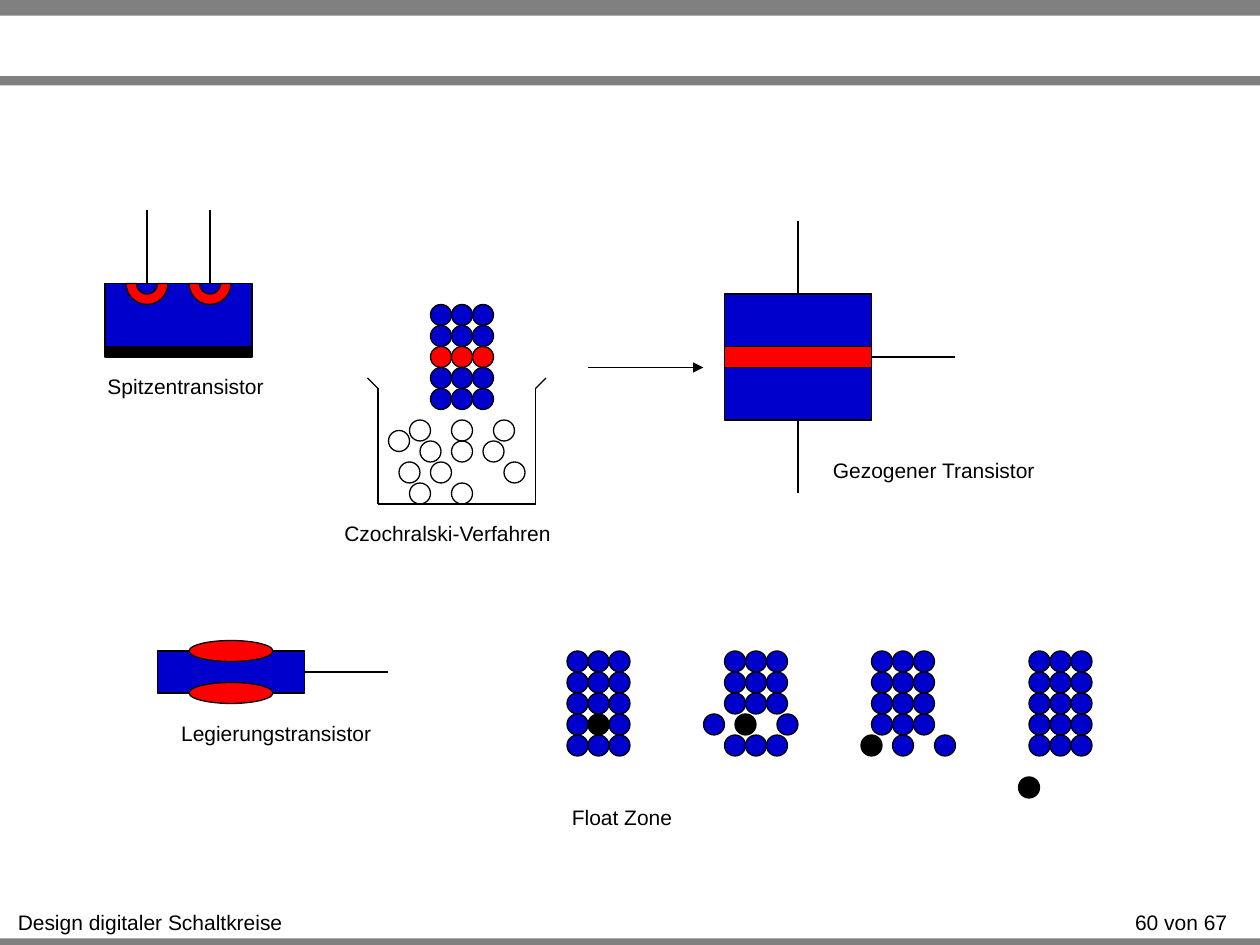
from dataclasses import dataclass
from itertools import pairwise
from typing import Optional

from lxml import etree
from pptx import Presentation
from pptx.dml.color import RGBColor
from pptx.enum.shapes import MSO_CONNECTOR, MSO_SHAPE
from pptx.enum.text import MSO_AUTO_SIZE, PP_ALIGN
from pptx.oxml.ns import qn
from pptx.util import Pt

RECT = MSO_SHAPE.RECTANGLE
OVAL = MSO_SHAPE.OVAL
ARC = MSO_SHAPE.BLOCK_ARC
STRAIGHT = MSO_CONNECTOR.STRAIGHT
CENTER = PP_ALIGN.CENTER
FIT = MSO_AUTO_SIZE.SHAPE_TO_FIT_TEXT
TOP, BOTTOM, RIGHT = 0, 2, 3

PX = 9525  # EMU per px, 96 px to the inch
STEP = 8
DOT = 2 * STEP


@dataclass(frozen=True)
class Theme:
    font: str = "Arial"
    size: int = 12
    stroke: float = 0.75
    gray: RGBColor = RGBColor(0x80, 0x80, 0x80)
    blue: RGBColor = RGBColor(0x00, 0x00, 0xCC)
    red: RGBColor = RGBColor(0xFF, 0x00, 0x00)
    black: RGBColor = RGBColor(0x00, 0x00, 0x00)


@dataclass(frozen=True)
class Box:
    x: int
    y: int
    w: int
    h: int


@dataclass(frozen=True)
class Label:
    text: str
    x: int
    y: int
    w: int


@dataclass(frozen=True)
class Lattice:
    """Dots by row; each character is one STEP wide, each row one DOT high."""
    x: int
    y: int
    rows: tuple[str, ...]


THEME = Theme()
DYES = {"b": THEME.blue, "r": THEME.red, "k": THEME.black, "w": None}

BARS = (Box(0, 715, 960, 8), Box(0, 0, 960, 12), Box(0, 58, 960, 7))

LABELS = (
    Label("Design digitaler Schaltkreise", 3, 688, 223),
    Label("60 von 67", 848, 688, 104),
    Label("Spitzentransistor", 72, 280, 139),
    Label("Czochralski-Verfahren", 252, 392, 178),
    Label("Gezogener Transistor", 624, 344, 175),
    Label("Legierungstransistor", 128, 544, 165),
    Label("Float Zone", 424, 608, 100),
)

MELT = (
    Lattice(296, 328, ("w",)),
    Lattice(296, 320, (
        "  w   w   w",
        "   w  w  w",
        " w  w      w",
        "  w   w",
    )),
)
CRYSTAL = Lattice(328, 232, ("b b b",) * 2 + ("r r r",) + ("b b b",) * 2)
ZONES = (
    Lattice(432, 496, ("b b b",) * 3 + ("b k b", "b b b")),
    Lattice(536, 496, ("  b b b",) * 3 + ("b  k   b", "  b b b")),
    Lattice(656, 496, (" b b b",) * 4 + ("k  b   b",)),
    Lattice(776, 496, (" b b b",) * 5 + ("", "k")),
)


def draw(slide, kind, box: Box, fill: Optional[RGBColor], edge: bool = True):
    shape = slide.shapes.add_shape(
        kind, *(n * PX for n in (box.x, box.y, box.w, box.h)))
    shape.shadow.inherit = False
    if fill is None:
        shape.fill.background()
    else:
        shape.fill.solid()
        shape.fill.fore_color.rgb = fill
    if edge:
        shape.line.color.rgb = THEME.black
        shape.line.width = Pt(THEME.stroke)
    else:
        shape.line.fill.background()
    return shape


def wire(slide, start: tuple[int, int], end: tuple[int, int]):
    line = slide.shapes.add_connector(
        STRAIGHT, *(n * PX for n in (*start, *end)))
    line.line.color.rgb = THEME.black
    line.line.width = Pt(THEME.stroke)
    etree.SubElement(line._element.spPr, qn("a:effectLst"))
    return line


def arrow(slide, start: tuple[int, int], end: tuple[int, int]) -> None:
    line = wire(slide, start, end)
    tip = etree.SubElement(line.line._get_or_add_ln(), qn("a:tailEnd"))
    tip.set("type", "triangle")


def write(slide, label: Label) -> None:
    box = slide.shapes.add_textbox(
        *(n * PX for n in (label.x, label.y, label.w, 29)))
    frame = box.text_frame
    frame.word_wrap = False
    frame.auto_size = FIT
    para = frame.paragraphs[0]
    para.alignment = CENTER
    run = para.add_run()
    run.text = label.text
    run.font.name = THEME.font
    run.font.size = Pt(THEME.size)
    run.font.color.rgb = THEME.black


def fill_dots(slide, grid: Lattice) -> None:
    for row, marks in enumerate(grid.rows):
        for col, mark in enumerate(marks):
            if mark != " ":
                spot = Box(grid.x + col * STEP, grid.y + row * DOT, DOT, DOT)
                draw(slide, OVAL, spot, DYES[mark])


def draw_point(slide) -> None:
    """Point-contact transistor."""
    draw(slide, RECT, Box(80, 216, 112, 48), THEME.blue)
    draw(slide, RECT, Box(80, 264, 112, 8), THEME.black)
    for x in (112, 160):
        wire(slide, (x, 160), (x, 216))
        draw(slide, ARC, Box(x - 16, 200, 32, 32), THEME.red).rotation = 180


def draw_pot(slide) -> None:
    """Crucible with melt and pulled crystal."""
    wall = ((280, 288), (288, 296), (288, 384), (408, 384), (408, 296),
            (416, 288))
    for start, end in pairwise(wall):
        wire(slide, start, end)
    for grid in (*MELT, CRYSTAL):
        fill_dots(slide, grid)


def draw_grown(slide) -> None:
    """Grown-junction transistor."""
    base = draw(slide, RECT, Box(552, 264, 112, 16), THEME.red)
    lower = draw(slide, RECT, Box(552, 280, 112, 40), THEME.blue)
    upper = draw(slide, RECT, Box(552, 224, 112, 40), THEME.blue)
    wire(slide, (608, 224), (608, 168)).begin_connect(upper, TOP)
    wire(slide, (608, 320), (608, 376)).begin_connect(lower, BOTTOM)
    wire(slide, (664, 272), (728, 272)).begin_connect(base, RIGHT)


def draw_alloy(slide) -> None:
    """Alloy-junction transistor."""
    base = draw(slide, RECT, Box(120, 496, 112, 32), THEME.blue)
    for y in (488, 520):
        draw(slide, OVAL, Box(144, y, 64, 16), THEME.red)
    wire(slide, (232, 512), (296, 512)).begin_connect(base, RIGHT)


def main() -> None:
    deck = Presentation()
    deck.slide_width, deck.slide_height = 960 * PX, 720 * PX
    slide = deck.slides.add_slide(deck.slide_layouts[6])
    for bar in BARS:
        draw(slide, RECT, bar, THEME.gray, edge=False)
    draw_point(slide)
    draw_pot(slide)
    arrow(slide, (448, 280), (536, 280))
    draw_grown(slide)
    draw_alloy(slide)
    for zone in ZONES:
        fill_dots(slide, zone)
    for label in LABELS:
        write(slide, label)
    deck.save("out.pptx")


if __name__ == "__main__":
    main()
